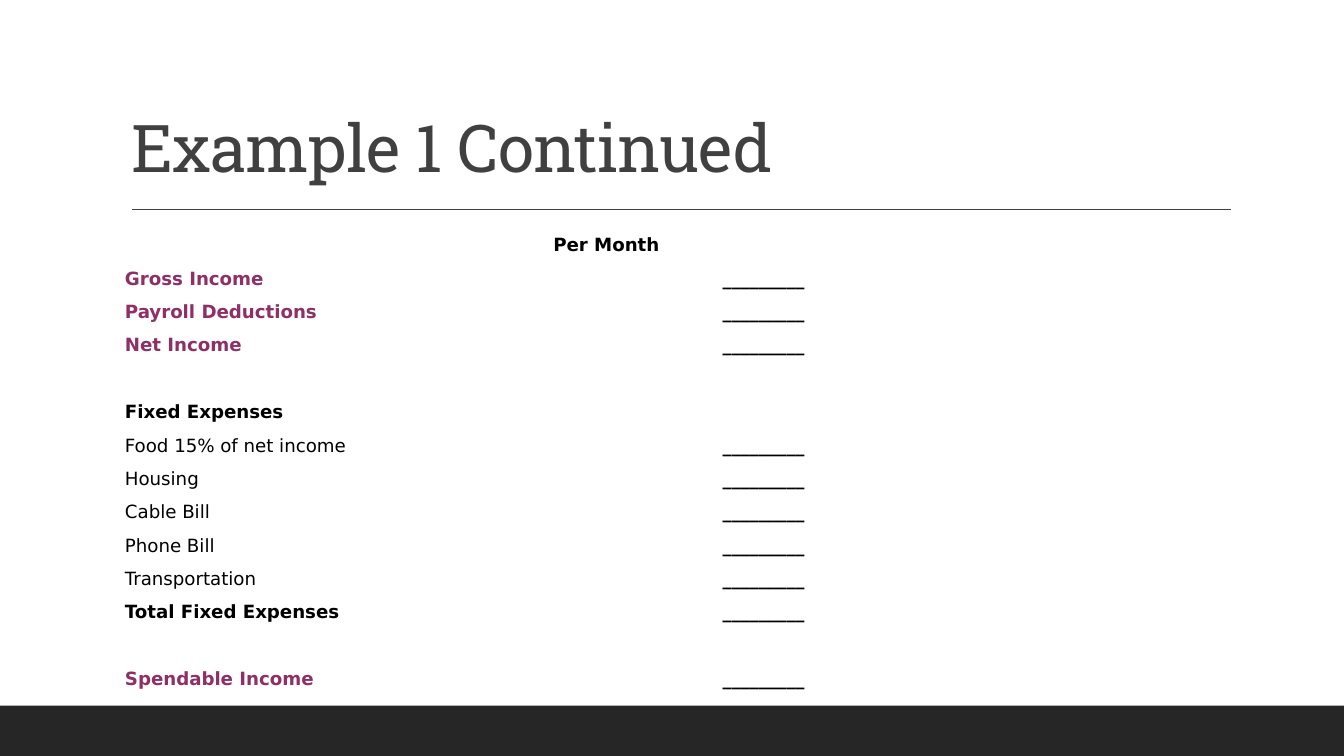
import pptx
import pptx.util
import pptx.dml.color
import pptx.enum.shapes
import pptx.enum.text
import pptx.oxml.ns
import lxml.etree

WIDTH = pptx.util.Inches(13.33)
HEIGHT = pptx.util.Inches(7.5)
COL = WIDTH / 100
ROW = HEIGHT / 100

PLUM, BLACK, GRAY, DARK, WHITE = "8D3066", "000000", "404040", "262626", "FFFFFF"
BODY_SIZE = pptx.util.Pt(13)
BLANK = "_________"
BUDGET = [
    ("", "Per Month", BLACK, True),
    ("Gross Income", BLANK, PLUM, True),
    ("Payroll Deductions", BLANK, PLUM, True),
    ("Net Income", BLANK, PLUM, True),
    ("", "", BLACK, False),
    ("Fixed Expenses", "", BLACK, True),
    ("Food 15% of net income", BLANK, BLACK, False),
    ("Housing", BLANK, BLACK, False),
    ("Cable Bill", BLANK, BLACK, False),
    ("Phone Bill", BLANK, BLACK, False),
    ("Transportation", BLANK, BLACK, False),
    ("Total Fixed Expenses", BLANK, BLACK, True),
    ("", "", BLACK, False),
    ("Spendable Income", BLANK, PLUM, True),
]


def rgb(color):
    return pptx.dml.color.RGBColor.from_string(color)


def grid(left, top, width, height):
    return round(left * COL), round(top * ROW), round(width * COL), round(height * ROW)


def format_run(r, font, size, color, bold=False):
    r.font.name = font
    r.font.size = size
    r.font.bold = bold
    r.font.color.rgb = rgb(color)


def add_footer_bar(s, box):
    sp = s.shapes.add_shape(pptx.enum.shapes.MSO_SHAPE.RECTANGLE, *box)
    sp.shadow.inherit = False
    sp.fill.solid()
    sp.fill.fore_color.rgb = rgb(DARK)
    sp.line.fill.background()


def add_rule(s, box):
    left, top, width, height = box
    line = s.shapes.add_connector(
        pptx.enum.shapes.MSO_CONNECTOR.STRAIGHT, left, top, left + width, top + height)
    line.line.color.rgb = rgb(GRAY)
    line.line.width = pptx.util.Pt(1)
    lxml.etree.SubElement(line._element.spPr, pptx.oxml.ns.qn("a:effectLst"))


def set_title(s, box, text):
    sp = s.shapes.title
    sp.left, sp.top, sp.width, sp.height = box
    tf = sp.text_frame
    tf.text = text
    tf.auto_size = pptx.enum.text.MSO_AUTO_SIZE.NONE
    tf.vertical_anchor = pptx.enum.text.MSO_ANCHOR.BOTTOM
    p = tf.paragraphs[0]
    p.alignment = pptx.enum.text.PP_ALIGN.LEFT
    p.line_spacing = 0.9
    r = p.runs[0]
    format_run(r, "Roboto Slab", pptx.util.Pt(47), GRAY)
    r.font._element.set("spc", "-50")


def fill_cell(cell, text, color, bold):
    cell.fill.solid()
    cell.fill.fore_color.rgb = rgb(WHITE)
    cell.vertical_anchor = pptx.enum.text.MSO_ANCHOR.MIDDLE
    margin = pptx.util.Inches(0.04)
    cell.margin_left = cell.margin_right = margin
    cell.margin_top = cell.margin_bottom = margin
    p = cell.text_frame.paragraphs[0]
    if not text:
        end = lxml.etree.SubElement(p._p, pptx.oxml.ns.qn("a:endParaRPr"))
        end.set("sz", str(BODY_SIZE.centipoints))
        return
    p.text = text
    if text == BLANK:
        p.alignment = pptx.enum.text.PP_ALIGN.CENTER
    format_run(p.runs[0], "DejaVu Sans", BODY_SIZE, color, bold)


def add_budget_table(s, box):
    table = s.shapes.add_table(len(BUDGET), 2, *box).table
    table.first_row = False
    table.horz_banding = False
    for row, (label, amount, color, bold) in zip(table.rows, BUDGET):
        row.height = box[3] // len(BUDGET)
        fill_cell(row.cells[0], label, color, bold)
        fill_cell(row.cells[1], amount, BLACK, True)


def main():
    prs = pptx.Presentation()
    prs.slide_width, prs.slide_height = WIDTH, HEIGHT
    s = prs.slides.add_slide(prs.slide_layouts[5])
    add_footer_bar(s, grid(0, 93.33, 100, 6.67))
    add_rule(s, grid(9.83, 27.73, 81.75, 0))
    set_title(s, grid(9, 4.13, 82.5, 21.2), "Example 1 Continued")
    add_budget_table(s, grid(9, 30.27, 63.75, 61.87))
    prs.save("out.pptx")


if __name__ == "__main__":
    main()
